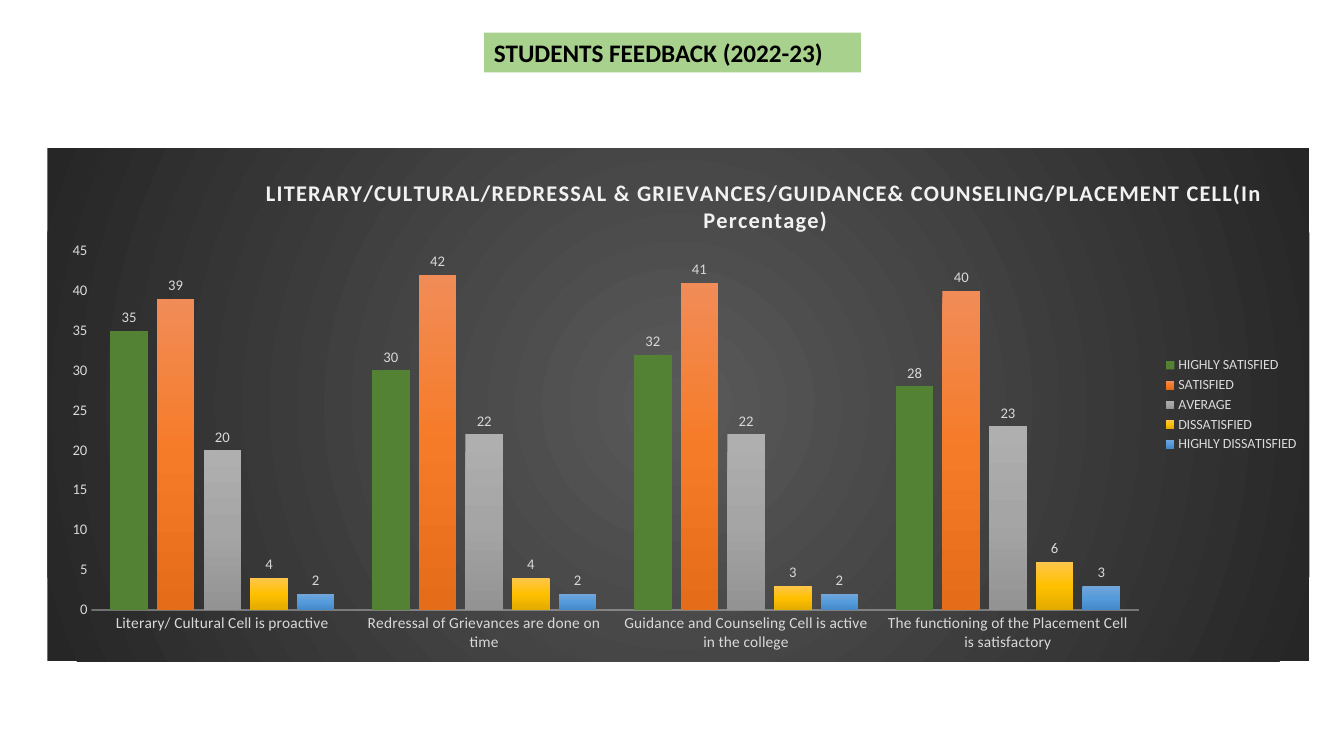
from lxml import etree
from pptx import Presentation
from pptx.chart.data import CategoryChartData
from pptx.dml.color import RGBColor
from pptx.enum.chart import XL_CHART_TYPE, XL_LABEL_POSITION, XL_LEGEND_POSITION, XL_TICK_MARK
from pptx.enum.shapes import MSO_SHAPE
from pptx.enum.text import MSO_ANCHOR, PP_ALIGN
from pptx.oxml import parse_xml
from pptx.oxml.ns import nsdecls, qn
from pptx.util import Pt

COLUMNS = XL_CHART_TYPE.COLUMN_CLUSTERED
OUTSIDE_END = XL_LABEL_POSITION.OUTSIDE_END
LEGEND_RIGHT = XL_LEGEND_POSITION.RIGHT
NO_TICK = XL_TICK_MARK.NONE
RECTANGLE = MSO_SHAPE.RECTANGLE
MIDDLE = MSO_ANCHOR.MIDDLE
LEFT = PP_ALIGN.LEFT

EMU_PER_PX = 9525
FONT = "Calibri"
PALE = "D9D9D9"
NEAR_WHITE = "F2F2F2"

LINEAR = '<a:lin ang="5400000" scaled="0"/>'
RADIAL = ('<a:path path="circle"><a:fillToRect l="50000" t="50000" '
          'r="50000" b="50000"/></a:path>')

CHART_TITLE = ("LITERARY/CULTURAL/REDRESSAL & GRIEVANCES/GUIDANCE& "
               "COUNSELING/PLACEMENT CELL(In Percentage)")
CATEGORIES = [
    "Literary/ Cultural Cell is proactive",
    "Redressal of Grievances are done on time",
    "Guidance and Counseling Cell is active in the college",
    "The functioning of the Placement Cell is satisfactory",
]
RATINGS = [
    ("HIGHLY SATISFIED", (35, 30, 32, 28), ["548235"]),
    ("SATISFIED", (39, 42, 41, 40), ["F18C57", "F67B28", "E56C19"]),
    ("AVERAGE", (20, 22, 22, 23), ["AFAFAF", "A5A5A5", "939393"]),
    ("DISSATISFIED", (4, 4, 3, 6), ["FFC64B", "FFC000", "E3AB00"]),
    ("HIGHLY DISSATISFIED", (2, 2, 2, 3), ["71A6DB", "559BDB", "448ACA"]),
]


def px(*lengths):
    return [length * EMU_PER_PX for length in lengths]


def color(hex_code):
    return RGBColor.from_string(hex_code)


def style_font(font, size, hex_code, bold=False):
    font.name = FONT
    font.size = Pt(size)
    font.bold = bold
    font.color.rgb = color(hex_code)


def gradient(hex_codes, direction):
    """Return a gradient fill with evenly spaced stops."""
    last = len(hex_codes) - 1
    stops = "".join(
        f'<a:gs pos="{100000 * index // last}"><a:srgbClr val="{code}"/></a:gs>'
        for index, code in enumerate(hex_codes))
    return parse_xml(f'<a:gradFill {nsdecls("a")} rotWithShape="1">'
                     f'<a:gsLst>{stops}</a:gsLst>{direction}</a:gradFill>')


def set_layout(element, index, **fractions):
    """Place a chart part by fractions of the chart area."""
    for previous in element.findall(qn("c:layout")):
        element.remove(previous)
    layout = etree.Element(qn("c:layout"))
    manual = etree.SubElement(layout, qn("c:manualLayout"))
    if "w" in fractions:
        etree.SubElement(manual, qn("c:layoutTarget"), val="inner")
    for mode in ("xMode", "yMode"):
        etree.SubElement(manual, qn(f"c:{mode}"), val="edge")
    for name, value in fractions.items():
        etree.SubElement(manual, qn(f"c:{name}"), val=str(value))
    element.insert(index, layout)


def add_heading(page, text, bounds):
    box = page.shapes.add_shape(RECTANGLE, *px(*bounds))
    box.shadow.inherit = False
    box.fill.solid()
    box.fill.fore_color.rgb = color("A9D18E")
    box.line.fill.background()
    frame = box.text_frame
    frame.word_wrap = True
    frame.vertical_anchor = MIDDLE
    para = frame.paragraphs[0]
    para.alignment = LEFT
    span = para.add_run()
    span.text = text
    style_font(span.font, 18, "000000", bold=True)


def add_chart_title(chart, text):
    title = chart.chart_title
    span = title.text_frame.paragraphs[0].add_run()
    span.text = text
    style_font(span.font, 16, NEAR_WHITE, bold=True)
    span.font._element.set("spc", "100")
    set_layout(title._element, 1, x=0.17, y=0.05)


def style_axes(chart):
    categories, values = chart.category_axis, chart.value_axis
    for axis, size in ((categories, 11), (values, 10.5)):
        axis.major_tick_mark = axis.minor_tick_mark = NO_TICK
        axis.has_major_gridlines = False
        style_font(axis.tick_labels.font, size, PALE)
    line = categories.format.line
    line.width = Pt(1)
    line.color.rgb = color(NEAR_WHITE)
    tint = line._ln.find(f".//{qn('a:srgbClr')}")
    etree.SubElement(tint, qn("a:alpha"), val="54000")
    values.format.line.fill.background()
    values.minimum_scale, values.maximum_scale, values.major_unit = 0, 45, 5


def style_series(series, hex_codes):
    if len(hex_codes) == 1:
        series.format.fill.solid()
        series.format.fill.fore_color.rgb = color(hex_codes[0])
    else:
        series._element.get_or_add_spPr().insert(0, gradient(hex_codes, LINEAR))
    series.invert_if_negative = False
    labels = series.data_labels
    labels.show_value = True
    labels.position = OUTSIDE_END
    style_font(labels.font, 10.5, PALE)


def add_ratings_chart(page, bounds):
    data = CategoryChartData()
    data.categories = CATEGORIES
    for name, values, _ in RATINGS:
        data.add_series(name, values)
    chart = page.shapes.add_chart(COLUMNS, *px(*bounds), data).chart
    style_font(chart.font, 10, "000000")

    background = parse_xml(f'<c:spPr {nsdecls("c", "a")}><a:ln><a:noFill/></a:ln></c:spPr>')
    background.insert(0, gradient(["595959", "262626"], RADIAL))
    chart_part = chart._chartSpace.find(qn("c:chart"))
    chart_part.addnext(background)
    set_layout(chart_part.find(qn("c:plotArea")), 0, x=0.035, y=0.2, w=0.83, h=0.7)

    add_chart_title(chart, CHART_TITLE)
    style_axes(chart)
    plot = chart.plots[0]
    plot.vary_by_categories = False
    plot.gap_width = 100
    plot.overlap = -24
    for series, (_, _, hex_codes) in zip(plot.series, RATINGS):
        style_series(series, hex_codes)

    chart.has_legend = True
    chart.legend.position = LEGEND_RIGHT
    chart.legend.include_in_layout = False
    style_font(chart.legend.font, 10, PALE)


def main():
    deck = Presentation()
    deck.slide_width, deck.slide_height = px(1280, 720)
    page = deck.slides.add_slide(deck.slide_layouts[6])
    add_heading(page, "STUDENTS FEEDBACK (2022-23)", (461, 31, 359, 38))
    add_ratings_chart(page, (45, 141, 1202, 489))
    deck.save("out.pptx")


if __name__ == "__main__":
    main()
